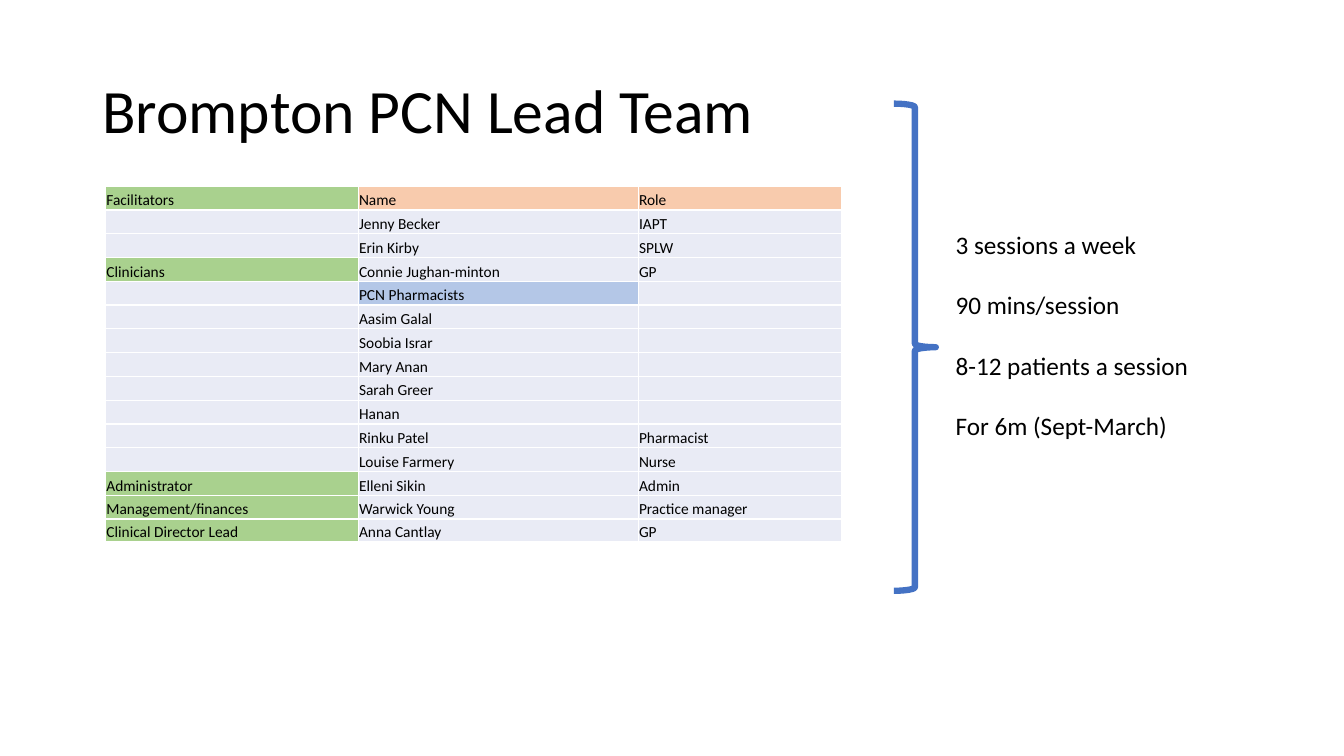
from lxml import etree
from pptx import Presentation
from pptx import util as u
from pptx.dml.color import RGBColor
from pptx.enum import shapes, text
from pptx.oxml.ns import qn

PX = 6350
FONT = "Calibri"
COLORS = {
    "ink": "000000",
    "border": "FFFFFF",
    "group": "A9D18E",
    "header": "F8CBAD",
    "subgroup": "B4C7E7",
    "cell": "E9EBF5",
    "brace": "4472C4",
}
TEAM = [
    ("Facilitators", "Name", "Role"),
    ("", "Jenny Becker", "IAPT"),
    ("", "Erin Kirby", "SPLW"),
    ("Clinicians", "Connie Jughan-minton", "GP"),
    ("", "PCN Pharmacists", ""),
    ("", "Aasim Galal", ""),
    ("", "Soobia Israr", ""),
    ("", "Mary Anan", ""),
    ("", "Sarah Greer", ""),
    ("", "Hanan", ""),
    ("", "Rinku Patel", "Pharmacist"),
    ("", "Louise Farmery", "Nurse"),
    ("Administrator", "Elleni Sikin", "Admin"),
    ("Management/finances", "Warwick Young", "Practice manager"),
    ("Clinical Director Lead", "Anna Cantlay", "GP"),
]
COLUMN_WIDTHS = (361, 400, 290)
ROW_HEIGHTS = [34] * (len(TEAM) - 1) + [32]
SCHEDULE = [
    "3 sessions a week",
    "90 mins/session",
    "8-12 patients a session",
    "For 6m (Sept-March)",
]


def px(*lengths):
    """Turn pixel lengths into EMU."""
    return [u.Emu(length * PX) for length in lengths]


def color(name):
    """Look up a named colour."""
    return RGBColor.from_string(COLORS[name])


def style_runs(paragraph, size):
    """Format every run of a paragraph."""
    for run in paragraph.runs:
        run.font.name = FONT
        run.font.size = u.Pt(size)
        run.font.color.rgb = color("ink")


def add_heading(slide, box):
    """Place and format the slide title."""
    heading = slide.shapes.title
    heading.left, heading.top, heading.width, heading.height = px(*box)
    frame = heading.text_frame
    frame.text = "Brompton PCN Lead Team"
    frame.word_wrap = True
    frame.auto_size = text.MSO_AUTO_SIZE.NONE
    frame.vertical_anchor = text.MSO_ANCHOR.MIDDLE
    paragraph = frame.paragraphs[0]
    paragraph.alignment = text.PP_ALIGN.LEFT
    paragraph.line_spacing = 0.9
    style_runs(paragraph, 44)


def cell_fill(row, column, wording):
    """Choose the fill colour name of a team cell."""
    if column == 0 and wording:
        return "group"
    if row == 0:
        return "header"
    return "subgroup" if wording == "PCN Pharmacists" else "cell"


def add_borders(cell):
    """Draw thin white lines round a cell."""
    properties = cell._tc.get_or_add_tcPr()
    for side in ("a:lnL", "a:lnR", "a:lnT", "a:lnB"):
        line = etree.SubElement(properties, qn(side), w=str(u.Pt(1)))
        fill = etree.SubElement(line, qn("a:solidFill"))
        etree.SubElement(fill, qn("a:srgbClr"), val=COLORS["border"])


def format_cell(cell, wording, fill):
    """Write and format one team cell."""
    cell.text = wording
    cell.margin_left, cell.margin_right, cell.margin_top, cell.margin_bottom = px(1, 1, 1, 0)
    cell.vertical_anchor = text.MSO_ANCHOR.BOTTOM
    paragraph = cell.text_frame.paragraphs[0]
    style_runs(paragraph, 11)
    if not wording:
        etree.SubElement(paragraph._p, qn("a:endParaRPr"), sz="1100")
    add_borders(cell)
    cell.fill.solid()
    cell.fill.fore_color.rgb = color(fill)


def add_team(slide, left, top):
    """Build the team table from its top left corner."""
    size = px(left, top, sum(COLUMN_WIDTHS), sum(ROW_HEIGHTS))
    team = slide.shapes.add_table(len(TEAM), len(COLUMN_WIDTHS), *size).table
    team.first_row = team.horz_banding = False
    for column, width in zip(team.columns, px(*COLUMN_WIDTHS)):
        column.width = width
    for row, height in zip(team.rows, px(*ROW_HEIGHTS)):
        row.height = height
    for r, member in enumerate(TEAM):
        for c, wording in enumerate(member):
            format_cell(team.cell(r, c), wording, cell_fill(r, c, wording))


def add_schedule(slide, box):
    """Draw the brace and the session notes to its right."""
    left, top, width, height = box
    brace_width, gap, notes_top, notes_height = 60, 14, 172, 363
    brace = slide.shapes.add_shape(
        shapes.MSO_SHAPE.RIGHT_BRACE, *px(left, top, brace_width, height))
    brace.shadow.inherit = False
    brace.fill.background()
    brace.line.color.rgb = color("brace")
    brace.line.width = u.Pt(4.5)

    indent = brace_width + gap
    notes = slide.shapes.add_textbox(
        *px(left + indent, top + notes_top, width - indent, notes_height))
    frame = notes.text_frame
    frame.text = "\n".join(SCHEDULE)
    frame.word_wrap = True
    for paragraph in frame.paragraphs:
        paragraph.space_after = u.Pt(21.6)
        style_runs(paragraph, 18)


def main():
    """Build and save the lead team slide."""
    deck = Presentation()
    deck.slide_width, deck.slide_height = px(1920, 1080)
    slide = deck.slides.add_slide(deck.slide_layouts.get_by_name("Title Only"))
    add_heading(slide, (132, 58, 1656, 209))
    add_team(slide, 151, 266)
    add_schedule(slide, (1277, 148, 512, 696))
    deck.save("out.pptx")


if __name__ == "__main__":
    main()
